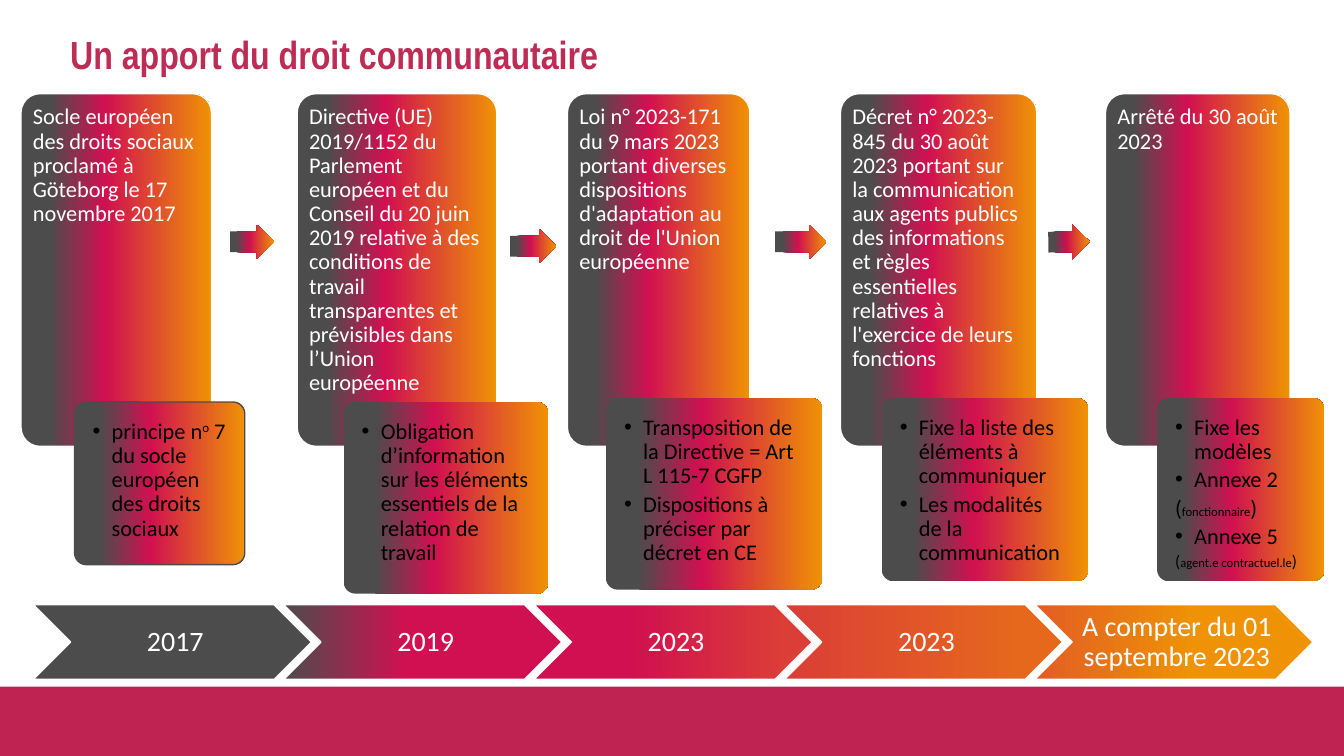
from collections import namedtuple
from dataclasses import dataclass

from lxml import etree
from pptx import Presentation
from pptx import util as u
from pptx.dml.color import RGBColor
from pptx.enum import shapes, text
from pptx.oxml import ns


@dataclass(frozen=True)
class Theme:
    """Colours, fonts and type sizes of the slide."""
    white: str = "FFFFFF"
    black: str = "000000"
    grey: str = "4C4C4C"
    band: str = "BE2352"
    heading: str = "BD2C54"
    flow: tuple = ((15, "4C4C4C"), (44, "D01050"), (100, "EF9205"))
    heading_font: str = "Arial Narrow"
    body_font: str = "Calibri"
    heading_size: int = 28
    year_size: int = 20
    body_size: int = 16
    small_size: int = 12
    tiny_size: int = 9


THEME = Theme()
Box = namedtuple("Box", "left top width height")
Step = namedtuple("Step", "act act_left act_width points point_box")
Line = namedtuple("Line", "runs bullet")

ACT_TOP, ACT_HEIGHT, ACT_RADIUS = 2.36, 8.89, 0.48
POINT_RADIUS = 0.3
ARROW_HEIGHT = 0.87


def bullet(*runs):
    """Return a bulleted line made of runs."""
    return Line(runs, True)


def plain(*runs):
    """Return a line of runs without a bullet."""
    return Line(runs, False)


STEPS = [
    Step("Socle européen des droits sociaux proclamé à Göteborg le 17 novembre 2017", 0.53, 4.8,
         [bullet("principe n", ("o", {"baseline": 30000}), " 7 du socle européen des droits sociaux")],
         Box(1.88, 10.13, 4.29, 4.1)),
    Step("Directive (UE) 2019/1152 du Parlement européen et du Conseil du 20 juin 2019 relative "
         "à des conditions de travail transparentes et prévisibles dans l’Union européenne", 7.49, 5.03,
         [bullet("Obligation d’information sur les éléments essentiels de la relation de travail")],
         Box(8.66, 10.13, 5.16, 4.83)),
    Step("Loi n° 2023-171 du 9 mars 2023 portant diverses dispositions d'adaptation au droit "
         "de l'Union européenne", 14.3, 4.6,
         [bullet("Transposition de la Directive = Art L 115-7 CGFP"),
          bullet("Dispositions à préciser par décret en CE")],
         Box(15.27, 10.03, 5.46, 4.83)),
    Step("Décret n° 2023-845 du 30 août 2023 portant sur la communication aux agents publics des "
         "informations et règles essentielles relatives à l'exercice de leurs fonctions", 21.18, 4.95,
         [bullet("Fixe la liste des éléments à communiquer"),
          bullet("Les modalités de la communication")],
         Box(22.22, 10.03, 5.21, 4.62)),
    Step("Arrêté du 30 août 2023", 27.86, 4.65,
         [bullet("Fixe les modèles"), bullet("Annexe 2"),
          plain("(", ("fonctionnaire", {"size": THEME.tiny_size}), ")"),
          bullet("Annexe 5"),
          plain(("(", {"size": THEME.small_size}),
                ("agent.e contractuel.le", {"size": THEME.tiny_size}),
                (")", {"size": THEME.small_size}))],
         Box(29.16, 10.03, 4.22, 4.62)),
]
ARROWS = [(5.79, 5.66, 1.12, 0), (12.85, 5.77, 1.17, 0),
          (19.53, 5.66, 1.3, 0), (26.42, 5.66, 1.04, -0.9)]
YEARS = [
    ("2017", ((0, "4C4C4C"), (100, "4C4C4C"))),
    ("2019", ((0, "4C4C4C"), (44, "D01050"))),
    ("2023", ((34, "D01050"), (91, "DB3E36"))),
    ("2023", ((0, "DB3E36"), (85, "E5681D"))),
    ("A compter du 01 septembre 2023", ((0, "E25D24"), (57, "EF9205"))),
]


def write(frame, lines, size=THEME.body_size, color=THEME.white, font=THEME.body_font, bold=False,
          align=text.PP_ALIGN.LEFT, anchor=text.MSO_ANCHOR.TOP, insets=(0.25, 0.13, 0.25, 0.13), after=0):
    """Fill a text frame with lines in the given format."""
    frame.word_wrap = True
    frame.vertical_anchor = anchor
    frame.margin_left, frame.margin_top, frame.margin_right, frame.margin_bottom = map(u.Cm, insets)
    for index, line in enumerate(lines):
        paragraph = frame.add_paragraph() if index else frame.paragraphs[0]
        paragraph.alignment = align
        paragraph.line_spacing = 0.9
        paragraph.space_after = u.Pt(after)
        if line.bullet:
            properties = paragraph._p.get_or_add_pPr()
            properties.set("marL", str(u.Cm(0.48)))
            properties.set("indent", str(-u.Cm(0.48)))
            etree.SubElement(properties, ns.qn("a:buFont")).set("typeface", "Arial")
            etree.SubElement(properties, ns.qn("a:buChar")).set("char", "•")
        for part in line.runs:
            words, changes = (part, {}) if isinstance(part, str) else part
            run = paragraph.add_run()
            run.text = words
            run.font.name = font
            run.font.size = u.Pt(changes.get("size", size))
            run.font.bold = bold
            run.font.color.rgb = RGBColor.from_string(color)
            if "baseline" in changes:
                run._r.get_or_add_rPr().set("baseline", str(changes["baseline"]))


def add_block(slide, kind, box, fill, outline=None, adjustments=()):
    """Add a preset shape with a solid colour or gradient stops."""
    block = slide.shapes.add_shape(kind, *map(u.Cm, box))
    block.shadow.inherit = False
    for index, value in enumerate(adjustments):
        block.adjustments[index] = value
    if isinstance(fill, str):
        block.fill.solid()
        block.fill.fore_color.rgb = RGBColor.from_string(fill)
    else:
        block.fill.gradient()
        block.fill.gradient_angle = 0
        stops = block._element.spPr.find(".//" + ns.qn("a:gsLst"))
        for stop in list(stops):
            stops.remove(stop)
        for position, color in fill:
            stop = etree.SubElement(stops, ns.qn("a:gs"), pos=str(position * 1000))
            etree.SubElement(stop, ns.qn("a:srgbClr"), val=color)
    if outline:
        block.line.color.rgb = RGBColor.from_string(outline)
        block.line.width = u.Pt(1)
    else:
        block.line.fill.background()
    return block


def add_heading(slide, box, words):
    """Place the slide heading."""
    heading = slide.shapes.add_textbox(*map(u.Cm, box))
    write(heading.text_frame, [plain(words)], size=THEME.heading_size, color=THEME.heading,
          font=THEME.heading_font, bold=True)


def add_card(slide, box, lines, radius, inset, outline=None, **style):
    """Place a rounded gradient card with its lines of text."""
    card = add_block(slide, shapes.MSO_SHAPE.ROUNDED_RECTANGLE, box, THEME.flow, outline,
                     [radius / min(box.width, box.height)])
    write(card.text_frame, lines, insets=(inset,) * 4, **style)


def add_step(slide, step, point_outline):
    """Place a legal act and the card of its main points."""
    act_box = Box(step.act_left, ACT_TOP, step.act_width, ACT_HEIGHT)
    add_card(slide, act_box, [plain(step.act)], ACT_RADIUS, 0.16, THEME.white)
    add_card(slide, step.point_box, step.points, POINT_RADIUS, 0.37, point_outline,
             color=THEME.black, after=2.9)


def add_arrow(slide, box, rotation):
    """Place an arrow that leads to the next act."""
    arrow = add_block(slide, shapes.MSO_SHAPE.RIGHT_ARROW, box, THEME.flow, adjustments=(0.6, 0.5))
    arrow.rotation = rotation


def add_timeline(slide, box, years):
    """Place the row of year chevrons, each overlapping the next."""
    pitch = 6.31
    width = box.width - pitch * (len(years) - 1)
    for index, (year, stops) in enumerate(years):
        place = Box(box.left + index * pitch, box.top, width, box.height)
        chevron = add_block(slide, shapes.MSO_SHAPE.CHEVRON, place, stops, THEME.white, [0.5])
        write(chevron.text_frame, [plain(year)], size=THEME.year_size, align=text.PP_ALIGN.CENTER,
              anchor=text.MSO_ANCHOR.MIDDLE, insets=(0.23, 0.08, 0.08, 0.08))


def main():
    """Build and save the slide."""
    deck = Presentation()
    deck.slide_width, deck.slide_height = u.Cm(33.87), u.Cm(19.05)
    slide = deck.slides.add_slide(deck.slide_layouts[6])
    add_block(slide, shapes.MSO_SHAPE.RECTANGLE, Box(0, 17.3, 33.87, 1.75), THEME.band)
    add_heading(slide, Box(1.52, 0.76, 15.44, 1.93), "Un apport du droit communautaire")
    for index, step in enumerate(STEPS):
        add_step(slide, step, None if index else THEME.grey)
    for left, top, width, rotation in ARROWS:
        add_arrow(slide, Box(left, top, width, ARROW_HEIGHT), rotation)
    add_timeline(slide, Box(0.84, 15.24, 32.25, 1.88), YEARS)
    deck.save("out.pptx")


if __name__ == "__main__":
    main()
